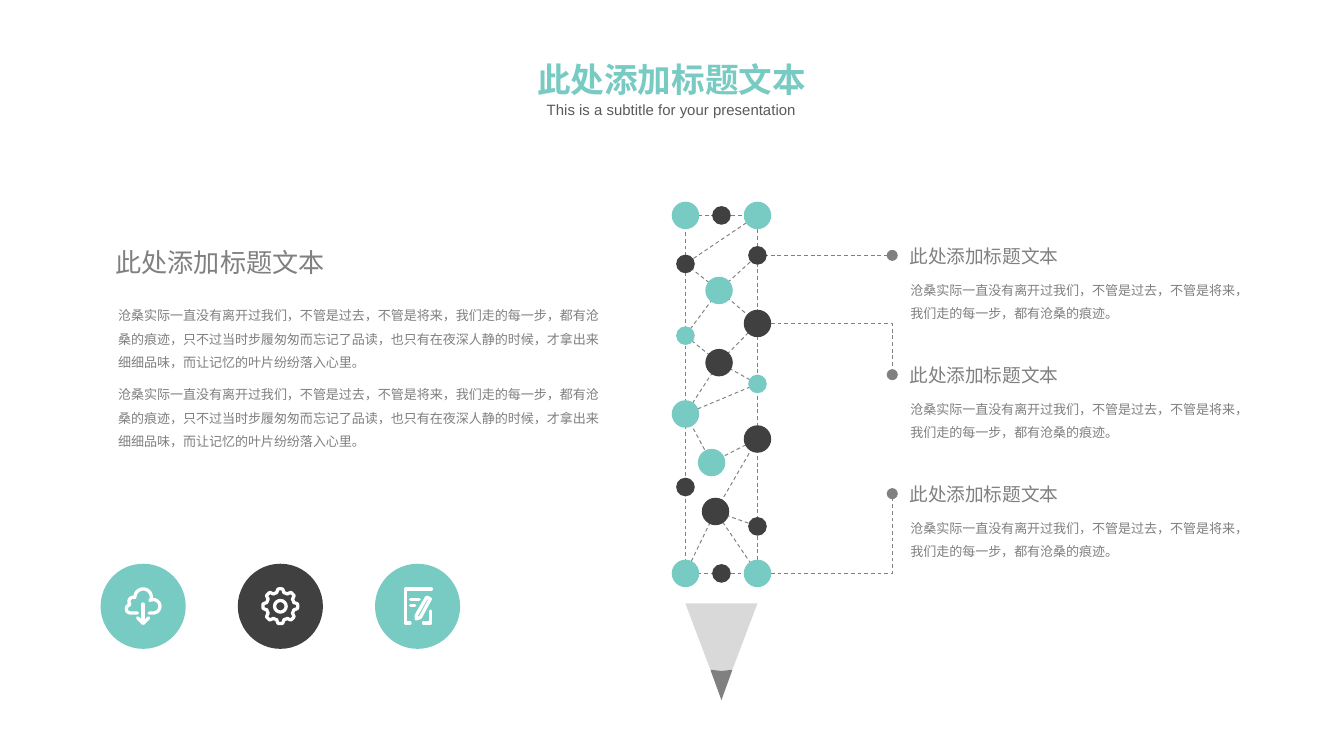
from dataclasses import dataclass
from math import cos, pi, radians, sin

from lxml.etree import SubElement
from pptx import Presentation
from pptx.dml.color import RGBColor
from pptx.enum.dml import MSO_LINE
from pptx.enum.shapes import MSO_CONNECTOR, MSO_SHAPE
from pptx.enum.text import PP_ALIGN
from pptx.oxml.ns import qn
from pptx.util import Pt


@dataclass(frozen=True)
class Theme:
    teal: str = "77CBC3"
    dark: str = "404040"
    grey: str = "808080"
    pale: str = "D9D9D9"
    subtitle: str = "595959"
    white: str = "FFFFFF"
    cjk: str = "Noto Sans CJK SC"
    latin: str = "Arial"
    title_size: float = 18
    heading_size: float = 14
    callout_size: float = 10
    subtitle_size: float = 8
    body_size: float = 7


THEME = Theme()
HEADING = "此处添加标题文本"
BODY = ("沧桑实际一直没有离开过我们，不管是过去，不管是将来，我们走的每一步，都有沧桑的痕迹，"
        "只不过当时步履匆匆而忘记了品读，也只有在夜深人静的时候，才拿出来细细品味，"
        "而让记忆的叶片纷纷落入心里。")
CALLOUT = ["沧桑实际一直没有离开过我们，不管是过去，不管是将来，", "我们走的每一步，都有沧桑的痕迹。"]

# Pencil nodes: x, y of the centre inside the pencil, diameter, colour
BIG, SMALL = 14.7, 10
WIDTH, HEIGHT = 38.6, 191.8
NODES = {
    "top left": (0, 0, BIG, THEME.teal),
    "top middle": (WIDTH / 2, 0, SMALL, THEME.dark),
    "top right": (WIDTH, 0, BIG, THEME.teal),
    "left 1": (0, 26, SMALL, THEME.dark),
    "left 2": (0, 64.4, SMALL, THEME.teal),
    "left 3": (0, 106.4, BIG, THEME.teal),
    "left 4": (0, 145.5, SMALL, THEME.dark),
    "inner 1": (18, 40.2, BIG, THEME.teal),
    "inner 2": (18, 78.9, BIG, THEME.dark),
    "inner 3": (14, 132.4, BIG, THEME.teal),
    "inner 4": (16.1, 158.6, BIG, THEME.dark),
    "right 1": (WIDTH, 21.4, SMALL, THEME.dark),
    "right 2": (WIDTH, 57.9, BIG, THEME.dark),
    "right 3": (WIDTH, 90.3, SMALL, THEME.teal),
    "right 4": (WIDTH, 119.8, BIG, THEME.dark),
    "right 5": (WIDTH, 166.6, SMALL, THEME.dark),
    "bottom left": (0, HEIGHT, BIG, THEME.teal),
    "bottom middle": (WIDTH / 2, HEIGHT, SMALL, THEME.dark),
    "bottom right": (WIDTH, HEIGHT, BIG, THEME.teal),
}
CHAINS = [
    ["top right", "left 1", "inner 1", "right 2", "inner 2", "left 3",
     "inner 3", "right 4", "inner 4", "bottom right"],
    ["bottom left", "inner 4", "right 5"],
    ["left 3", "right 3", "inner 2", "left 2", "inner 1", "right 1"],
]


def color(value):
    return RGBColor.from_string(value)


def add_text(page, box, lines, size, tint=THEME.grey, font=THEME.cjk,
             inset=(0, 0), spacing=1.0, align=PP_ALIGN.LEFT, bold=False):
    frame = page.shapes.add_textbox(*map(Pt, box)).text_frame
    frame.word_wrap = True
    frame.margin_left = frame.margin_right = Pt(inset[0])
    frame.margin_top = frame.margin_bottom = Pt(inset[1])
    for index, line in enumerate(lines):
        para = frame.paragraphs[0] if index == 0 else frame.add_paragraph()
        para.text = line
        para.alignment, para.line_spacing = align, spacing
        para.font.name, para.font.size, para.font.bold = font, Pt(size), bold
        para.font.color.rgb = color(tint)
        SubElement(para._p.pPr.find(qn("a:defRPr")), qn("a:ea"), typeface=font)


def paint(shape, fill=None):
    """Fill the shape, or leave it hollow, with neither line nor shadow."""
    shape.shadow.inherit = False
    shape.line.fill.background()
    if fill:
        shape.fill.solid()
        shape.fill.fore_color.rgb = color(fill)
    else:
        shape.fill.background()


def dash(shape):
    shape.line.color.rgb = color(THEME.grey)
    shape.line.width = Pt(0.5)
    shape.line.dash_style = MSO_LINE.DASH


def add_disc(page, x, y, diameter, fill):
    disc = page.shapes.add_shape(MSO_SHAPE.OVAL, Pt(x - diameter / 2), Pt(y - diameter / 2),
                                 Pt(diameter), Pt(diameter))
    paint(disc, fill)
    return disc


def add_outline(page, points, origin=(0, 0), close=False, fill=None):
    places = [(Pt(origin[0] + x), Pt(origin[1] + y)) for x, y in points]
    builder = page.shapes.build_freeform(*places[0])
    builder.add_line_segments(places[1:], close=close)
    shape = builder.convert_to_shape()
    paint(shape, fill)
    return shape


def add_header(page, left, top, width):
    add_text(page, (left, top, width, 28.8), [HEADING], THEME.title_size, THEME.teal,
             inset=(7.2, 3.6), align=PP_ALIGN.CENTER, bold=True)
    add_text(page, (left, top + 25.9, width, 9.4), ["This is a subtitle for your presentation"],
             THEME.subtitle_size, THEME.subtitle, THEME.latin, align=PP_ALIGN.CENTER)


def add_story(page, left, top, width):
    add_text(page, (left, top, 175, 24.5), [HEADING], THEME.heading_size, inset=(7.2, 3.6))
    for offset in (32.4, 74.9):
        add_text(page, (left + 8.6, top + offset, width, 38.2), [BODY], THEME.body_size, spacing=1.5)


def add_lead(page, points):
    """Dashed line, straight or bent, that ends in a dot."""
    if len(points) == 2:
        lead = page.shapes.add_connector(MSO_CONNECTOR.STRAIGHT, *(Pt(v) for p in points for v in p))
        SubElement(lead._element.spPr, qn("a:effectLst"))
    else:
        lead = add_outline(page, points)
    dash(lead)
    SubElement(lead.line._get_or_add_ln(), qn("a:tailEnd"), type="oval")


def add_callouts(page, left, top, pitch, pencil_left, pencil_top):
    nodes = ("right 1", "right 2", "bottom right")
    for row, node in enumerate(nodes):
        y = top + row * pitch
        start = (pencil_left + NODES[node][0], pencil_top + NODES[node][1])
        end = (left - 2.2, y + 9.5)
        bend = [] if abs(start[1] - end[1]) < 1 else [(end[0], start[1])]
        if not bend:
            end = (end[0], start[1])
        add_lead(page, [start, *bend, end])
        add_text(page, (left, y, 97.2, 19.4), [HEADING], THEME.callout_size, inset=(7.2, 3.6))
        add_text(page, (left + 7.5, y + 19.5, 189.4, 25.2), CALLOUT, THEME.body_size, spacing=1.5)


def add_pencil(page, left, top):
    frame = page.shapes.add_shape(MSO_SHAPE.RECTANGLE, *map(Pt, (left, top, WIDTH, HEIGHT)))
    paint(frame)
    dash(frame)
    for chain in CHAINS:
        dash(add_outline(page, [NODES[name][:2] for name in chain], (left, top)))
    for x, y, diameter, fill in NODES.values():
        add_disc(page, left + x, top + y, diameter, fill)
    edge = [(13.4, 243.4), (WIDTH / 2, 244), (WIDTH - 13.4, 243.4)]
    add_outline(page, [(0, 207.9), *edge, (WIDTH, 207.9)], (left, top), True, THEME.pale)
    add_outline(page, [*edge, (WIDTH / 2, 259.7)], (left, top), True, THEME.grey)


def arc(x, y, radius, start, end):
    steps = 16
    angles = [radians(start + (end - start) * step / steps) for step in range(steps + 1)]
    return [(x + radius * cos(a), y + radius * sin(a)) for a in angles]


def cloud_strokes():
    cloud = [(-3, 3.6), *arc(-6.8, 1.4, 2.2, 90, 250), *arc(-5.4, -2.6, 2.2, 140, 290),
             *arc(0, -4.9, 4.4, 180, 375), *arc(5.4, 0, 3.6, 240, 450), (3.2, 3.6)]
    return [(cloud, False), ([(0, -1.2), (0, 9)], False), ([(-3, 6.2), (0, 9.2), (3, 6.2)], False)]


def gear_strokes():
    rim = []
    for step in range(96):
        angle = 2 * pi * step / 96
        radius = 8.4 + 0.9 * max(-1, min(1, 2 * cos(8 * angle)))
        rim.append((radius * cos(angle), radius * sin(angle)))
    return [(rim, True), (arc(0, 0, 3.1, 0, 360), True)]


def note_strokes():
    return [([(-4, 9), (-6.5, 9), (-6.5, -9.2), (7.5, -9.2)], False),
            ([(7.1, 2.5), (7.1, 9), (3.2, 9)], False),
            ([(-3.7, -3.6), (0.9, -3.6)], False), ([(-3.7, -0.2), (-1.5, -0.2)], False),
            ([(-0.7, 6.8), (-0.7, 4.9), (4.9, -4.9), (6.8, -3.9), (1.5, 6)], True)]


def add_icons(page, left, top, diameter, pitch):
    icons = [(THEME.teal, cloud_strokes), (THEME.dark, gear_strokes), (THEME.teal, note_strokes)]
    for column, (fill, strokes) in enumerate(icons):
        center = (left + column * pitch + diameter / 2, top + diameter / 2)
        add_disc(page, *center, diameter, fill)
        for points, close in strokes():
            stroke = add_outline(page, points, center, close)
            stroke.line.color.rgb = color(THEME.white)
            stroke.line.width = Pt(1.75)
            stroke.line._get_or_add_ln().set("cap", "rnd")


def main():
    deck = Presentation()
    deck.slide_width, deck.slide_height = Pt(720), Pt(405)
    page = deck.slides.add_slide(deck.slide_layouts[6])
    add_callouts(page, 480.2, 127.4, 63.8, 367.2, 115.4)
    add_pencil(page, 367.2, 115.4)
    add_icons(page, 53.9, 302, 45.6, 73.5)
    add_story(page, 54.7, 128.2, 258.8)
    add_header(page, 272.2, 28.1, 175)
    deck.save("out.pptx")


if __name__ == "__main__":
    main()
